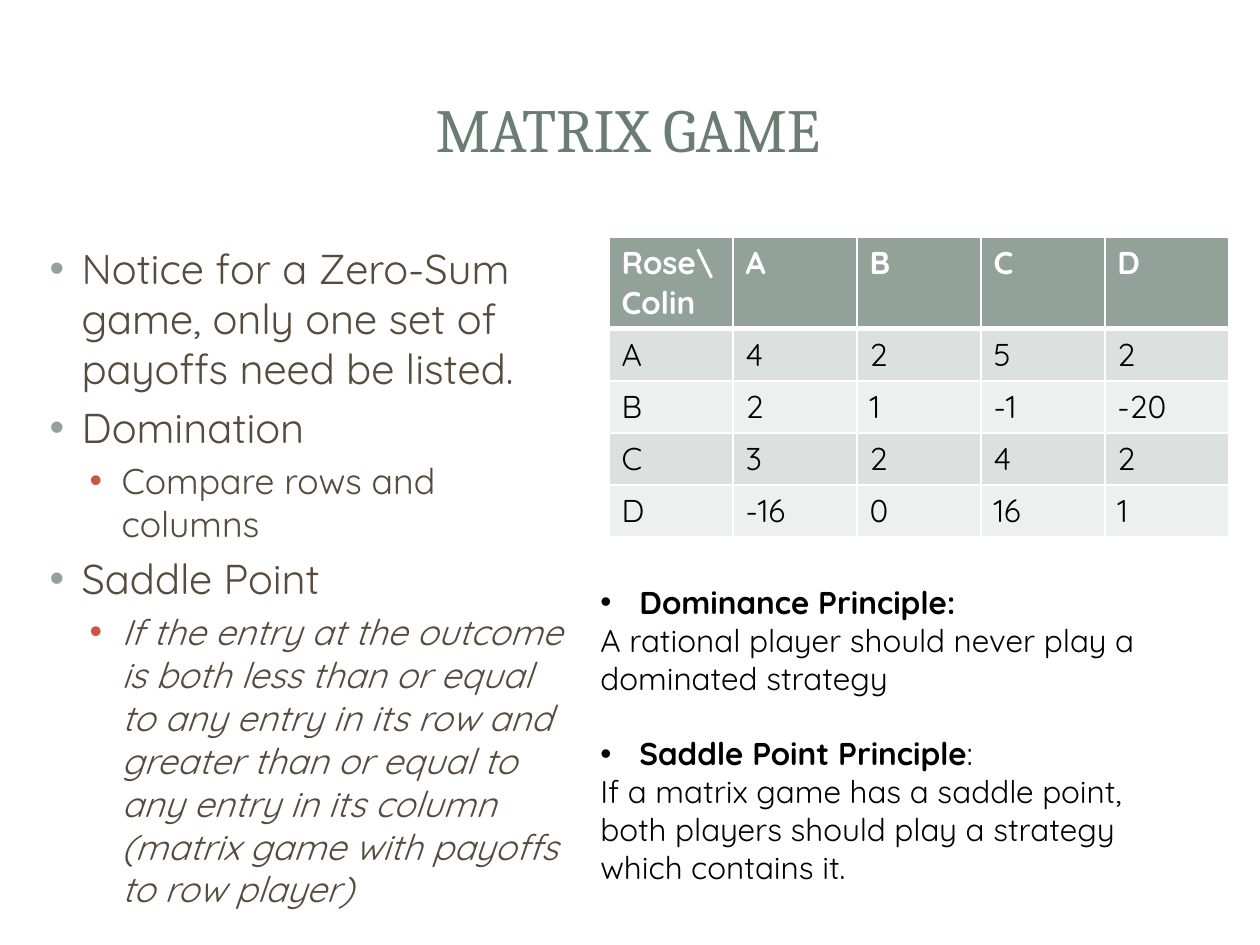
from dataclasses import dataclass

from lxml import etree
from pptx import Presentation
from pptx import util as u
from pptx.dml.color import RGBColor
from pptx.enum import shapes, text
from pptx.oxml.ns import qn


@dataclass(frozen=True)
class Theme:
    head_font: str = "Cambria"
    body_font: str = "Quicksand"
    title: str = "6B7D72"
    body: str = "564B3C"
    black: str = "000000"
    white: str = "FFFFFF"
    header: str = "93A299"
    bands: tuple = ("DCE0DE", "EEF0EF")
    bullets: tuple = ("93A299", "CF543F")  # by list level
    list_pt: tuple = (23.8, 20.4)  # by list level
    title_pt: float = 35
    text_pt: float = 18


T = Theme()

LIST = [  # level, text, italic
    (0, "Notice for a Zero-Sum game, only one set of payoffs need be listed.", False),
    (0, "Domination", False),
    (1, "Compare rows and columns", False),
    (0, "Saddle Point", False),
    (1, "If the entry at the outcome is both less than or equal to any entry in "
        "its row and greater than or equal to any entry in its column (matrix "
        "game with payoffs to row player)", True),
]
PAYOFFS = [
    ["Rose\\Colin", "A", "B", "C", "D"],
    ["A", "4", "2", "5", "2"],
    ["B", "2", "1", "-1", "-20"],
    ["C", "3", "2", "4", "2"],
    ["D", "-16", "0", "16", "1"],
]
PRINCIPLES = [  # bold heading, plain ending, statement
    ("Dominance Principle:", "",
     "A rational player should never play a dominated strategy"),
    ("Saddle Point Principle", ":",
     "If a matrix game has a saddle point, both players should play a strategy "
     "which contains it."),
]


def px(n):
    return u.Emu(round(n * 914400 / 126))


def place(sp, box):
    sp.left, sp.top, sp.width, sp.height = map(px, box)


def style(r, font, pt, color, bold=False, italic=False):
    f = r.font
    f.name, f.size, f.bold, f.italic = font, u.Pt(pt), bold, italic
    f.color.rgb = RGBColor.from_string(color)


def bullet(p, left, hang, color):
    pPr = p._p.get_or_add_pPr()
    pPr.set("marL", str(px(left)))
    pPr.set("indent", str(-px(hang)))
    clr = etree.SubElement(pPr, qn("a:buClr"))
    etree.SubElement(clr, qn("a:srgbClr"), val=color)
    etree.SubElement(pPr, qn("a:buFont"), typeface="Arial")
    etree.SubElement(pPr, qn("a:buChar"), char="•")


def border(cell, side, pt):
    tcPr = cell._tc.get_or_add_tcPr()
    ln = etree.SubElement(tcPr, qn("a:" + side), w=str(u.Pt(pt)))
    fill = etree.SubElement(ln, qn("a:solidFill"))
    etree.SubElement(fill, qn("a:srgbClr"), val=T.white)


def add_panels(s, box):
    """Page panel with a framed title band, behind the placeholders."""
    x, y, w, h = box
    kind = shapes.MSO_SHAPE
    parts = [  # preset, box, opacity in percent
        (kind.ROUNDED_RECTANGLE, box, 100),
        (kind.RECTANGLE, (x + 25, y + 24, w - 51, 183), 83),
        (kind.RECTANGLE, (x + 39, y + 38, w - 80, 154), 100),
    ]
    for i, (preset, area, opacity) in enumerate(parts):
        sp = s.shapes.add_shape(preset, *map(px, area))
        sp.shadow.inherit = False
        sp.line.fill.background()
        sp.fill.solid()
        sp.fill.fore_color.rgb = RGBColor.from_string(T.white)
        if preset == kind.ROUNDED_RECTANGLE:
            sp.adjustments[0] = 0.02
        if opacity < 100:
            clr = sp._element.spPr.find(".//" + qn("a:srgbClr"))
            etree.SubElement(clr, qn("a:alpha"), val=str(opacity * 1000))
        s.shapes._spTree.insert(2 + i, sp._element)


def add_title(s, box):
    sp = s.shapes.title
    place(sp, box)
    tf = sp.text_frame
    tf.text = "MATRIX GAME"
    tf.auto_size = text.MSO_AUTO_SIZE.NONE
    tf.vertical_anchor = text.MSO_ANCHOR.MIDDLE
    p = tf.paragraphs[0]
    p.alignment = text.PP_ALIGN.CENTER
    style(p.runs[0], T.head_font, T.title_pt, T.title)


def add_list(s, box):
    sp = s.placeholders[1]
    place(sp, box)
    tf = sp.text_frame
    tf.text = "\n".join(words for _, words, _ in LIST)
    tf.auto_size = text.MSO_AUTO_SIZE.NONE
    for p, (level, _, italic) in zip(tf.paragraphs, LIST):
        pt = T.list_pt[level]
        p.level = level
        p.line_spacing = 1.0
        p.space_before = u.Pt(round(pt * 0.2, 1))
        bullet(p, 48 + 40 * level, 32, T.bullets[level])
        style(p.runs[0], T.body_font, pt, T.body, italic=italic)


def add_payoffs(s, box):
    rows, cols = len(PAYOFFS), len(PAYOFFS[0])
    tbl = s.shapes.add_table(rows, cols, *map(px, box)).table
    for row in tbl.rows:
        row.height = px(52)
    for i, values in enumerate(PAYOFFS):
        head = i == 0
        for j, value in enumerate(values):
            cell = tbl.cell(i, j)
            cell.text = value
            style(cell.text_frame.paragraphs[0].runs[0], T.body_font, T.text_pt,
                  T.white if head else T.black, bold=head)
            # Heavier rule between the header and the payoffs
            for side, pt in (("lnL", 1), ("lnR", 1), ("lnT", 3 if i == 1 else 1),
                             ("lnB", 3 if head else 1)):
                border(cell, side, pt)
            cell.fill.solid()
            cell.fill.fore_color.rgb = RGBColor.from_string(
                T.header if head else T.bands[(i - 1) % 2])


def add_principles(s, box):
    tf = s.shapes.add_textbox(*map(px, box)).text_frame
    tf.word_wrap = True
    tf.auto_size = text.MSO_AUTO_SIZE.SHAPE_TO_FIT_TEXT
    tf.text = "\n".join(f"{head}\n{body}" for head, _, body in PRINCIPLES)
    for i, (_, ending, _) in enumerate(PRINCIPLES):
        head, body = tf.paragraphs[2 * i:2 * i + 2]
        if i:
            head.space_before = u.Pt(T.text_pt * 1.2)  # about one line apart
        bullet(head, 39, 39, T.black)
        style(head.runs[0], T.body_font, T.text_pt, T.black, bold=True)
        if ending:
            r = head.add_run()
            r.text = ending
            style(r, T.body_font, T.text_pt, T.black)
        style(body.runs[0], T.body_font, T.text_pt, T.black)


def main():
    prs = Presentation()
    prs.slide_width, prs.slide_height = px(1260), px(945)
    s = prs.slides.add_slide(prs.slide_layouts[1])
    add_panels(s, (13, 14, 1235, 918))
    add_title(s, (59, 57, 1138, 143))
    add_list(s, (21, 237, 557, 607))
    add_payoffs(s, (609, 237, 620, 292))
    add_principles(s, (588, 577, 620, 318))
    prs.save("out.pptx")


if __name__ == "__main__":
    main()
